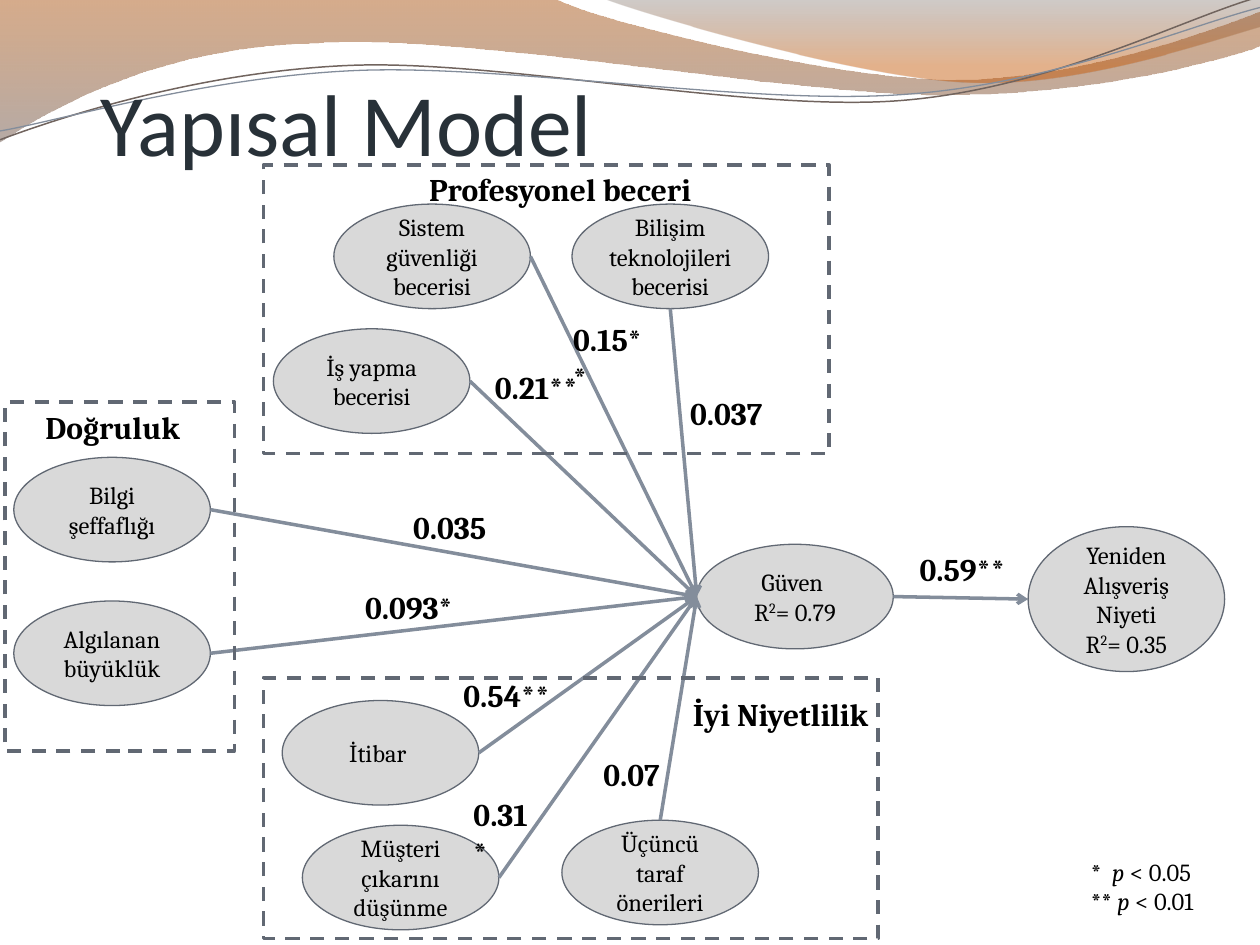
from math import cos, radians, sin

from lxml import etree
from pptx import Presentation
from pptx.dml.color import RGBColor
from pptx.enum.dml import MSO_LINE
from pptx.enum.shapes import MSO_CONNECTOR, MSO_SHAPE
from pptx.enum.text import MSO_ANCHOR, MSO_AUTO_SIZE, PP_ALIGN
from pptx.oxml.ns import qn
from pptx.util import Inches, Pt

OVAL, RECT = MSO_SHAPE.FLOWCHART_CONNECTOR, MSO_SHAPE.RECTANGLE
STRAIGHT, DASH = MSO_CONNECTOR.STRAIGHT, MSO_LINE.DASH
MIDDLE, BOTTOM = MSO_ANCHOR.MIDDLE, MSO_ANCHOR.BOTTOM
LEFT, CENTER = PP_ALIGN.LEFT, PP_ALIGN.CENTER
GROW = MSO_AUTO_SIZE.SHAPE_TO_FIT_TEXT

BLACK = RGBColor(0x00, 0x00, 0x00)
INK = RGBColor(0x28, 0x31, 0x38)
GRAY = RGBColor(0xD9, 0xD9, 0xD9)
SLATE = RGBColor(0x61, 0x68, 0x73)
STEEL = RGBColor(0x83, 0x8D, 0x9B)
TAUPE = RGBColor(0x71, 0x64, 0x5E)
RUST = RGBColor(0xA4, 0x47, 0x00)
BROWN = RGBColor(0x7A, 0x65, 0x5B)
UMBER = RGBColor(0x61, 0x53, 0x4C)
AMBER = RGBColor(0xC4, 0x54, 0x00)

# Each wave: start point, then cubic segments (six numbers) or line ends (two).
BANDS = [
    ([(0, 0), (4.4, -0.01), (4.76, 0.17, 6.64, 0.63, 7.58, 0.63),
      (8.53, 0.63, 9.58, 0.26, 10, 0.09), (10.01, 0.36),
      (9.83, 0.44, 8.7, 0.76, 7.46, 0.75), (6.22, 0.75, 3.82, 0.28, 2.57, 0.34),
      (1.29, 0.36, 0.46, 0.83, -0.01, 1.13)],
     [(0, RUST, 45), (1, BROWN, 55)]),
    ([(4.79, -0.01), (5.09, 0.11, 6.82, 0.62, 7.69, 0.65),
      (8.56, 0.69, 9.61, 0.32, 10, 0.21), (10, 0)],
     [(0, UMBER, 30), (0.8, AMBER, 45)]),
]
CURVES = [
    ([(0, 1.11), (0.48, 0.93, 1.58, 0.57, 2.77, 0.52),
      (3.95, 0.47, 5.93, 0.89, 7.13, 0.8), (8.33, 0.71, 9.38, 0.15, 9.98, -0.02)],
     TAUPE, 0.85),
    ([(0, 1.04), (0.47, 0.96, 1.64, 0.61, 2.83, 0.56),
      (4.03, 0.51, 5.97, 0.84, 7.17, 0.75), (8.36, 0.67, 9.41, 0.21, 10, 0.06)],
     STEEL, 0.75),
]
TILT = -2.7
PIVOT = (5, 0.58)

# Name: left, top, height, side inset, paragraphs
WIDE, HIGH = 1.56, 0.83
NODES = {
    "info": (0.11, 3.63, HIGH, 0.1, ["Bilgi şeffaflığı"]),
    "safe": (2.65, 1.62, HIGH, 0.1, ["Sistem güvenliği becerisi"]),
    "work": (2.17, 2.61, HIGH, 0.1, ["İş yapma becerisi"]),
    "fame": (2.24, 5.56, HIGH, 0.1, ["İtibar "]),
    "care": (2.4, 6.55, HIGH, 0.1, ["Müşteri çıkarını düşünme"]),
    "size": (0.11, 4.77, HIGH, 0.1, ["Algılanan büyüklük"]),
    "trust": (5.53, 4.32, HIGH, 0.1, ["Güven ", [("R", {}), ("2", {"sup": True}), ("= 0.79", {})]]),
    "again": (8.16, 4.18, 1.15, 0.1, ["Yeniden Alışveriş Niyeti",
                                      [("R", {}), ("2", {"sup": True}), ("= 0.35", {})]]),
    "tech": (4.54, 1.62, HIGH, 0, ["Bilişim teknolojileri becerisi"]),
    "third": (4.46, 6.51, HIGH, 0.1, ["Üçüncü taraf önerileri"]),
}
# From, side, to, weight, left, top and width of its label
PATHS = [
    ("work", "right", "trust", "0.21**", 3.83, 2.87, 0.86),
    ("fame", "right", "trust", "0.54**", 3.58, 5.32, 0.89),
    ("care", "right", "trust", "0.31*", 3.66, 6.26, 0.74),
    ("trust", "right", "again", "0.59**", 7.2, 4.32, 0.9),
    ("size", "right", "trust", "0.093*", 2.8, 4.62, 0.93),
    ("safe", "right", "trust", "0.15**", 4.45, 2.49, 0.85),
    ("info", "right", "trust", "0.035", 3.18, 3.98, 0.79),
    ("third", "top", "trust", "0.07", 4.69, 5.94, 0.68),
    ("tech", "bottom", "trust", "0.037", 5.38, 3.08, 0.8),
]
# Frame box, heading, heading box
GROUPS = [
    ((2.09, 1.31, 4.49, 2.29), "Profesyonel beceri", (3.24, 1.3, 2.41, 0.4)),
    ((0.04, 3.19, 1.82, 2.77), "Doğruluk", (0.22, 3.19, 1.35, 0.4)),
    ((2.09, 5.38, 4.88, 2.07), "İyi Niyetlilik", (5.35, 5.47, 1.69, 0.4)),
]
NOTES = [[(mark, {}), ("p ", {"ital": True}), (limit, {})]
         for mark, limit in [("*  ", "< 0.05"), ("** ", "< 0.01")]]


def write(frame, paras, size=14, font="Cambria", color=BLACK, bold=False, align=LEFT):
    """Fill a text frame; a paragraph is a string or a list of (text, format)."""
    for i, para in enumerate(paras):
        line = frame.paragraphs[0] if i == 0 else frame.add_paragraph()
        line.alignment = align
        for text, form in [(para, {})] if isinstance(para, str) else para:
            run = line.add_run()
            run.text = text
            run.font.size, run.font.name = Pt(size), font
            run.font.color.rgb, run.font.bold = color, bold
            run.font.italic = form.get("ital", False)
            if form.get("sup"):
                run._r.get_or_add_rPr().set("baseline", "30000")


def label(slide, box, paras, **form):
    frame = slide.shapes.add_textbox(*map(Inches, box)).text_frame
    frame.word_wrap, frame.auto_size = False, GROW
    write(frame, paras, **form)


def turn(step, angle):
    """Rotate each x, y pair of a step about the pivot."""
    c, s, out = cos(radians(angle)), sin(radians(angle)), []
    for x, y in zip(step[::2], step[1::2]):
        dx, dy = x - PIVOT[0], y - PIVOT[1]
        out += [PIVOT[0] + dx * c - dy * s, PIVOT[1] + dx * s + dy * c]
    return out


def wave(slide, steps, close):
    """Build the outline from its end points, then bend the cubic segments."""
    ends = [tuple(map(Inches, step[-2:])) for step in steps]
    path = slide.shapes.build_freeform(*ends[0])
    path.add_line_segments(ends[1:], close=close)
    shape = path.convert_to_shape()
    shape.shadow.inherit = False
    for node, step in zip(list(shape._element.iter(qn("a:lnTo"))), steps[1:]):
        if len(step) == 6:
            bend = etree.Element(qn("a:cubicBezTo"))
            for x, y in zip(step[::2], step[1::2]):
                etree.SubElement(bend, qn("a:pt"), x=str(Inches(x) - shape.left),
                                 y=str(Inches(y) - shape.top))
            node.getparent().replace(node, bend)
    return shape


def banner(slide):
    for steps, stops in BANDS:
        band = wave(slide, steps, True)
        band.line.fill.background()
        band.fill.gradient()
        band.fill.gradient_angle = 270
        for stop, (place, color, _) in zip(band.fill.gradient_stops, stops):
            stop.position, stop.color.rgb = place, color
        for node, (_, _, alpha) in zip(band._element.iter(qn("a:srgbClr")), stops):
            etree.SubElement(node, qn("a:alpha"), val=str(alpha * 1000))
    for steps, color, width in CURVES:
        curve = wave(slide, [turn(step, -TILT) for step in steps], False)
        curve.rotation = TILT
        curve.fill.background()
        curve.line.color.rgb, curve.line.width = color, Pt(width)


def title(slide, box, text):
    frame = slide.shapes.add_textbox(*map(Inches, box)).text_frame
    frame.word_wrap, frame.vertical_anchor = True, BOTTOM
    frame.margin_left = frame.margin_right = frame.margin_bottom = 0
    write(frame, [text], size=50, font="Calibri", color=INK)


def oval(slide, box, inset, paras):
    shape = slide.shapes.add_shape(OVAL, *map(Inches, box))
    shape.shadow.inherit = False
    shape.fill.solid()
    shape.fill.fore_color.rgb = GRAY
    shape.line.color.rgb, shape.line.width = SLATE, Pt(0.75)
    frame = shape.text_frame
    frame.word_wrap, frame.vertical_anchor = True, MIDDLE
    frame.margin_left = frame.margin_right = Inches(inset)
    write(frame, paras, align=CENTER)


def side(name, edge):
    """Midpoint of one edge of a node."""
    x, y, high = NODES[name][:3]
    return {"left": (x, y + high / 2), "right": (x + WIDE, y + high / 2),
            "top": (x + WIDE / 2, y), "bottom": (x + WIDE / 2, y + high)}[edge]


def arrow(slide, start, end):
    link = slide.shapes.add_connector(STRAIGHT, *map(Inches, start + end))
    link.line.color.rgb, link.line.width = STEEL, Pt(2)
    props = link._element.spPr
    etree.SubElement(props.find(qn("a:ln")), qn("a:tailEnd"), type="arrow")
    etree.SubElement(props, qn("a:effectLst"))


def group(slide, box, head, spot):
    shape = slide.shapes.add_shape(RECT, *map(Inches, box))
    shape.shadow.inherit = False
    shape.fill.background()
    shape.line.color.rgb, shape.line.width = SLATE, Pt(2)
    shape.line.dash_style = DASH
    label(slide, spot, [head], size=18, bold=True, align=CENTER)


def model(slide):
    for x, y, high, inset, paras in NODES.values():
        oval(slide, (x, y, WIDE, high), inset, paras)
    for start, edge, end, *_ in PATHS:
        arrow(slide, side(start, edge), side(end, "left"))
    for *_, text, x, y, wide in PATHS:
        label(slide, (x, y, wide, 0.4), [text], size=18, bold=True)
    for box, head, spot in GROUPS:
        group(slide, box, head, spot)


def main():
    deck = Presentation()
    deck.slide_width, deck.slide_height = Inches(10), Inches(7.5)
    slide = deck.slides.add_slide(deck.slide_layouts[6])
    banner(slide)
    title(slide, (0.8, 0.13, 9, 1.25), "Yapısal Model")
    model(slide)
    label(slide, (8.56, 6.75, 1.06, 0.57), NOTES)
    deck.save("out.pptx")


if __name__ == "__main__":
    main()
